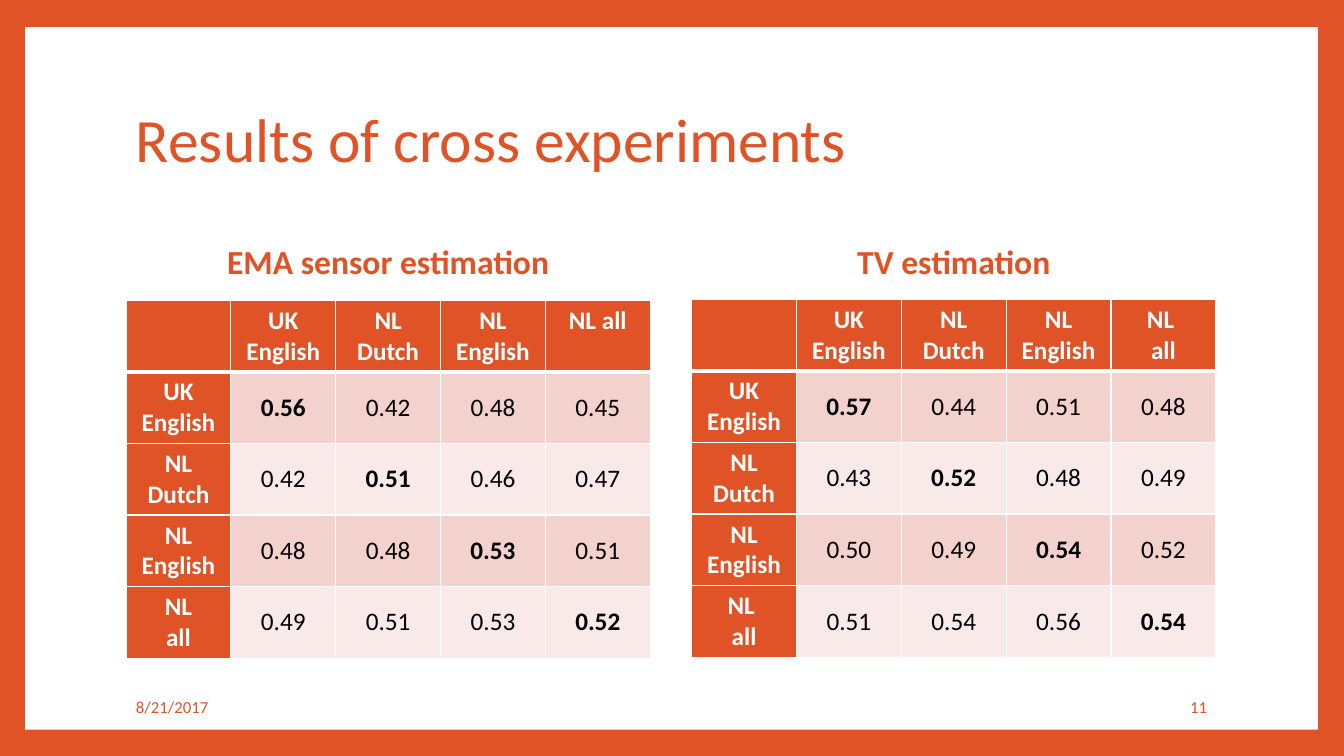
"""Build the slide with the two tables of cross-experiment results."""
from lxml import etree
from pptx import Presentation
from pptx import util as u
from pptx.dml.color import RGBColor
from pptx.enum import shapes, text
from pptx.oxml import ns

TITLE = "Results of cross experiments"
DATE, PAGE_NUMBER = "8/21/2017", "11"
LANGUAGES = ["UK English", "NL Dutch", "NL English"]
RESULTS = [
    {
        "heading": "EMA sensor estimation", "left": 1.25, "top": 2.98,
        "columns": LANGUAGES + ["NL all"],
        "rows": LANGUAGES + ["NL\nall"],
        "scores": [
            ["0.56", "0.42", "0.48", "0.45"],
            ["0.42", "0.51", "0.46", "0.47"],
            ["0.48", "0.48", "0.53", "0.51"],
            ["0.49", "0.51", "0.53", "0.52"],
        ],
    },
    {
        "heading": "TV estimation", "left": 6.86, "top": 2.97,
        "columns": LANGUAGES + ["NL \nall"],
        "rows": LANGUAGES + ["NL \nall"],
        "scores": [
            ["0.57", "0.44", "0.51", "0.48"],
            ["0.43", "0.52", "0.48", "0.49"],
            ["0.50", "0.49", "0.54", "0.52"],
            ["0.51", "0.54", "0.56", "0.54"],
        ],
    },
]

ORANGE = RGBColor(0xDF, 0x53, 0x27)
WHITE = RGBColor(0xFF, 0xFF, 0xFF)
BLACK = RGBColor(0x00, 0x00, 0x00)
DARK_BAND = RGBColor(0xF3, 0xD1, 0xCD)
LIGHT_BAND = RGBColor(0xF9, 0xE9, 0xE8)
FONT = "Calibri"
TABLE_WIDTH, ROW_HEIGHT = 5.2, 0.71
LEFT, CENTER, RIGHT = text.PP_ALIGN.LEFT, text.PP_ALIGN.CENTER, text.PP_ALIGN.RIGHT


def write(paragraph, content, size, color, bold=False, align=LEFT):
    paragraph.text = content
    paragraph.alignment = align
    for run in paragraph.runs:
        run.font.name = FONT
        run.font.size = u.Pt(size)
        run.font.bold = bold
        run.font.color.rgb = color


def add_text(slide, box, content, size, bold=False, align=LEFT, spacing=1.0):
    frame = slide.shapes.add_textbox(*map(u.Inches, box)).text_frame
    frame.word_wrap = True
    frame.vertical_anchor = text.MSO_ANCHOR.MIDDLE
    write(frame.paragraphs[0], content, size, ORANGE, bold, align)
    frame.paragraphs[0].line_spacing = spacing


def set_borders(cell, top, bottom):
    properties = cell._tc.get_or_add_tcPr()
    for side, points in (("L", 1), ("R", 1), ("T", top), ("B", bottom)):
        line = etree.SubElement(properties, ns.qn(f"a:ln{side}"), w=str(u.Pt(points)))
        fill = etree.SubElement(line, ns.qn("a:solidFill"))
        etree.SubElement(fill, ns.qn("a:srgbClr"), val=str(WHITE))


def add_results(slide, result):
    left = result["left"]
    add_text(slide, (left, 2.19, TABLE_WIDTH, 0.85), result["heading"], 24, True, CENTER, 0.9)
    grid = [[""] + result["columns"]]
    grid += [[name] + scores for name, scores in zip(result["rows"], result["scores"])]
    size = len(grid)
    table = slide.shapes.add_table(
        size, size, u.Inches(left), u.Inches(result["top"]),
        u.Inches(TABLE_WIDTH), u.Inches(ROW_HEIGHT * size)).table
    for row, values in enumerate(grid):
        for column, value in enumerate(values):
            cell = table.cell(row, column)
            header = row == 0 or column == 0
            band = DARK_BAND if row % 2 else LIGHT_BAND
            set_borders(cell, 3 if row == 1 else 1, 3 if row == 0 else 1)
            cell.fill.solid()
            cell.fill.fore_color.rgb = ORANGE if header else band
            cell.vertical_anchor = text.MSO_ANCHOR.TOP if header else text.MSO_ANCHOR.MIDDLE
            write(cell.text_frame.paragraphs[0], value, 18,
                  WHITE if header else BLACK, header or row == column, CENTER)


def main():
    presentation = Presentation()
    presentation.slide_width = u.Inches(13.33)
    presentation.slide_height = u.Inches(7.5)
    slide = presentation.slides.add_slide(presentation.slide_layouts[6])
    slide.background.fill.solid()
    slide.background.fill.fore_color.rgb = ORANGE

    panel = slide.shapes.add_shape(
        shapes.MSO_SHAPE.RECTANGLE, *map(u.Inches, (0.25, 0.27, 12.82, 6.97)))
    panel.shadow.inherit = False
    panel.fill.solid()
    panel.fill.fore_color.rgb = WHITE
    panel.line.fill.background()

    add_text(slide, (1.25, 0.67, 10.8, 1.48), TITLE, 44, spacing=0.9)
    for result in RESULTS:
        add_results(slide, result)
    add_text(slide, (1.25, 6.81, 2.55, 0.4), DATE, 12)
    add_text(slide, (10.2, 6.81, 1.87, 0.4), PAGE_NUMBER, 12, align=RIGHT)
    presentation.save("out.pptx")


if __name__ == "__main__":
    main()
